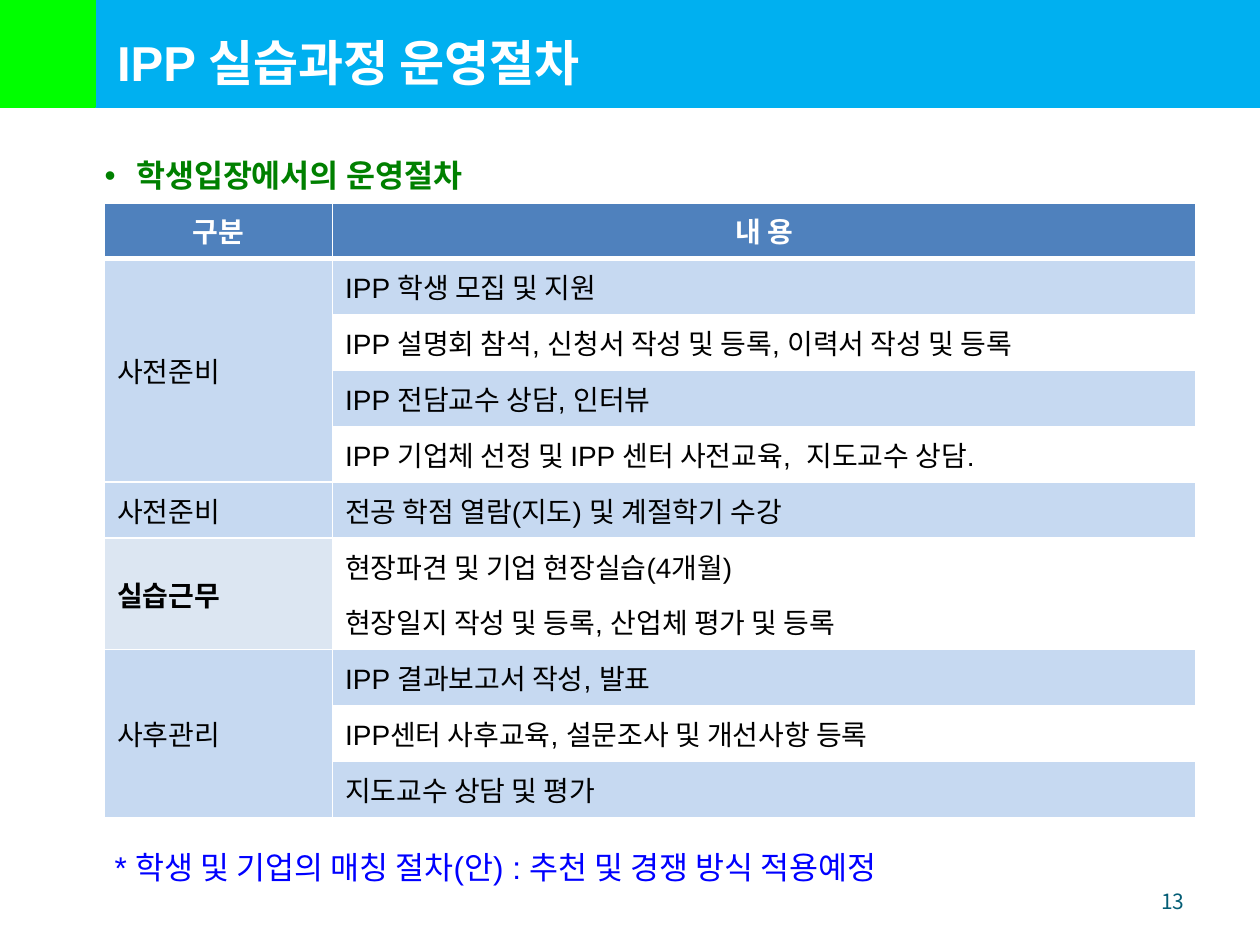
from dataclasses import dataclass

from lxml.etree import SubElement
from pptx import Presentation
from pptx.dml.color import RGBColor
from pptx.enum.shapes import MSO_SHAPE as Shape
from pptx.enum.text import MSO_ANCHOR as Anchor, MSO_AUTO_SIZE as AutoSize, PP_ALIGN as Align
from pptx.oxml.ns import qn
from pptx.util import Inches, Pt


@dataclass(frozen=True)
class Theme:
    latin: str = "Arial"
    korean: str = "Noto Sans CJK KR"
    title_size: int = 28
    body_size: int = 18
    table_size: int = 16
    number_size: int = 12
    white: str = "FFFFFF"
    black: str = "000000"
    band: str = "00B0F0"
    accent: str = "00FF00"
    heading: str = "008000"
    note: str = "0000FF"
    number: str = "045D75"
    header: str = "4F81BD"
    shaded: str = "C6D9F1"
    pale: str = "DCE6F2"


THEME = Theme()
HEADERS = ("구분", "내 용")
# Stage name, whether it is emphasised, and its steps
STAGES = (
    ("사전준비", False, (
        "IPP 학생 모집 및 지원",
        "IPP 설명회 참석, 신청서 작성 및 등록, 이력서 작성 및 등록",
        "IPP 전담교수 상담, 인터뷰",
        "IPP 기업체 선정 및 IPP 센터 사전교육,  지도교수 상담.",
    )),
    ("사전준비", False, ("전공 학점 열람(지도) 및 계절학기 수강",)),
    ("실습근무", True, (
        "현장파견 및 기업 현장실습(4개월)",
        "현장일지 작성 및 등록, 산업체 평가 및 등록",
    )),
    ("사후관리", False, (
        "IPP 결과보고서 작성, 발표",
        "IPP센터 사후교육, 설문조사 및 개선사항 등록",
        "지도교수 상담 및 평가",
    )),
)


def color(value):
    return RGBColor.from_string(value)


def box(left, top, width, height):
    return tuple(Inches(length) for length in (left, top, width, height))


def place(shape, area):
    shape.left, shape.top, shape.width, shape.height = area


def add_run(paragraph, text, size, ink, bold=False, latin=THEME.latin):
    run = paragraph.add_run()
    run.text = text
    font = run.font
    font.name, font.size, font.bold = latin, Pt(size), bold
    font.color.rgb = color(ink)
    SubElement(font._element, qn("a:ea"), typeface=THEME.korean)


def set_frame(frame, anchor=Anchor.TOP, margin=None):
    frame.word_wrap = True
    frame.auto_size = AutoSize.NONE
    frame.vertical_anchor = anchor
    if margin is not None:
        frame.margin_left = frame.margin_right = margin
        frame.margin_top = frame.margin_bottom = margin
    return frame.paragraphs[0]


def add_band(slide, area, fill):
    band = slide.shapes.add_shape(Shape.RECTANGLE, *area)
    band.shadow.inherit = False
    band.fill.solid()
    band.fill.fore_color.rgb = color(fill)
    band.line.color.rgb = color(fill)
    band.line.width = Pt(2)


def build_header(slide, area):
    left, top, width, height = area
    add_band(slide, area, THEME.band)
    add_band(slide, (left, top, int(width * 0.075), height), THEME.accent)
    title = slide.shapes.title
    place(title, (left + int(width * 0.083), top + height // 4, int(width * 0.68), int(height * 0.68)))
    slide.shapes._spTree.append(title._element)  # in front of the bands
    paragraph = set_frame(title.text_frame)
    paragraph.alignment = Align.LEFT
    add_run(paragraph, "IPP 실습과정 운영절차", THEME.title_size, THEME.white, True)


def write_line(shape, text, ink, bold=False):
    paragraph = set_frame(shape.text_frame, margin=0)
    paragraph.line_spacing = 1.5
    paragraph.space_before = Pt(0)
    paragraph.space_after = Pt(3)
    add_run(paragraph, text, THEME.body_size, ink, bold)
    return paragraph


def build_heading(slide, area):
    body = slide.placeholders[1]
    place(body, area)
    paragraph = write_line(body, "학생입장에서의 운영절차", THEME.heading, True)
    properties = paragraph._p.get_or_add_pPr()
    indent = Inches(0.25)
    properties.set("marL", str(indent))
    properties.set("indent", str(-indent))
    SubElement(properties, qn("a:buChar"), char="•")


def set_borders(cell, bottom):
    properties = cell._tc.get_or_add_tcPr()
    sides = (("a:lnL", 1), ("a:lnR", 1), ("a:lnT", 1), ("a:lnB", bottom))
    for position, (side, points) in enumerate(sides):
        line = SubElement(properties, qn(side), w=str(Pt(points)))
        fill = SubElement(line, qn("a:solidFill"))
        SubElement(fill, qn("a:srgbClr"), val=THEME.white)
        properties.insert(position, line)


def fill_cell(cell, text, fill, ink=THEME.black, bold=False, align=Align.LEFT):
    cell.fill.solid()
    cell.fill.fore_color.rgb = color(fill)
    cell.vertical_anchor = Anchor.MIDDLE
    paragraph = cell.text_frame.paragraphs[0]
    paragraph.alignment = align
    add_run(paragraph, text, THEME.table_size, ink, bold)


def build_table(slide, area):
    row_count = 1 + sum(len(steps) for _, _, steps in STAGES)
    table = slide.shapes.add_table(row_count, len(HEADERS), *area).table
    stage_width = int(area[2] * 0.209)
    table.columns[0].width = stage_width
    table.columns[1].width = area[2] - stage_width
    for row in range(row_count):
        table.rows[row].height = area[3] // row_count
        for column in range(len(HEADERS)):
            set_borders(table.cell(row, column), 3 if row == 0 else 1)
    for column, text in enumerate(HEADERS):
        fill_cell(table.cell(0, column), text, THEME.header, THEME.white, True, Align.CENTER)
    row = 1
    for stage, emphasised, steps in STAGES:
        first = table.cell(row, 0)
        if len(steps) > 1:
            first.merge(table.cell(row + len(steps) - 1, 0))
        fill_cell(first, stage, THEME.pale if emphasised else THEME.shaded, bold=emphasised)
        for number, step in enumerate(steps):
            plain = emphasised or number % 2
            fill_cell(table.cell(row + number, 1), step, THEME.white if plain else THEME.shaded)
        row += len(steps)


def build_note(slide, area):
    note = slide.shapes.add_textbox(*area)
    write_line(note, "* 학생 및 기업의 매칭 절차(안) : 추천 및 경쟁 방식 적용예정", THEME.note)


def build_page_number(slide, area):
    number = slide.shapes.add_textbox(*area)
    paragraph = set_frame(number.text_frame, Anchor.MIDDLE)
    paragraph.alignment = Align.RIGHT
    add_run(paragraph, "13", THEME.number_size, THEME.number, latin=THEME.korean)


def main():
    presentation = Presentation()
    presentation.slide_width, presentation.slide_height = Inches(10), Inches(7.5)
    slide = presentation.slides.add_slide(presentation.slide_layouts[1])
    build_heading(slide, box(0.83, 1.09, 8.89, 0.47))
    build_page_number(slide, box(7.17, 6.95, 2.33, 0.4))
    build_header(slide, box(0, 0, 10, 0.84))
    build_table(slide, box(0.83, 1.61, 8.66, 4.88))
    build_note(slide, box(0.91, 6.58, 8.89, 0.47))
    presentation.save("out.pptx")


if __name__ == "__main__":
    main()
